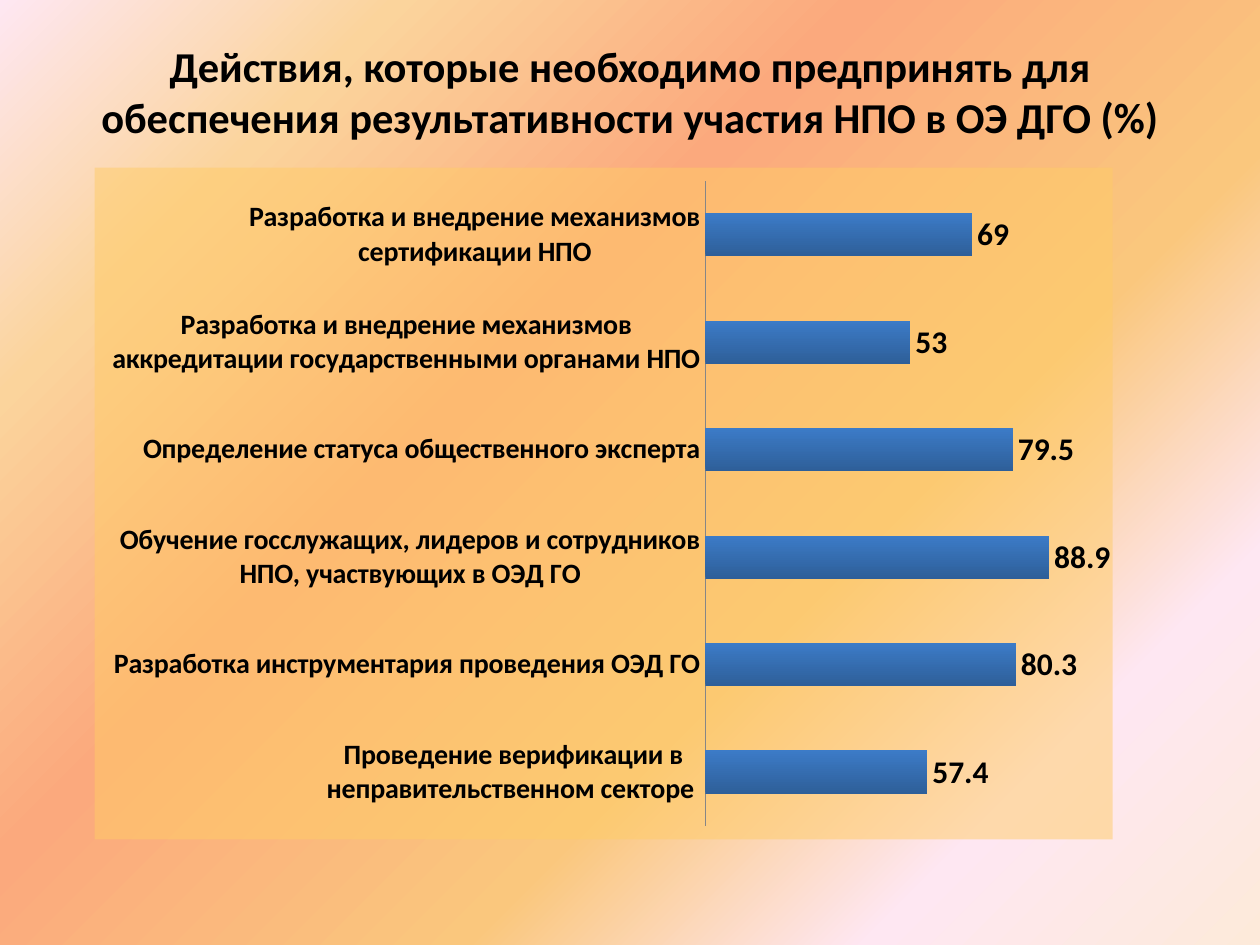
from lxml import etree
from pptx import Presentation
from pptx.chart.data import CategoryChartData
from pptx.dml.color import RGBColor
from pptx.enum.chart import XL_CHART_TYPE, XL_LABEL_POSITION, XL_TICK_MARK
from pptx.enum.text import MSO_ANCHOR, MSO_AUTO_SIZE, PP_ALIGN
from pptx.oxml import parse_xml
from pptx.oxml.ns import nsdecls, qn
from pptx.util import Cm, Pt

BAR_CLUSTERED = XL_CHART_TYPE.BAR_CLUSTERED
OUTSIDE_END = XL_LABEL_POSITION.OUTSIDE_END
NO_TICKS = XL_TICK_MARK.NONE
TOP = MSO_ANCHOR.TOP
NO_AUTOFIT = MSO_AUTO_SIZE.NONE
CENTER = PP_ALIGN.CENTER

BLACK = RGBColor(0x00, 0x00, 0x00)
AXIS_GREY = RGBColor(0x86, 0x86, 0x86)
BAR_LIGHT = RGBColor(0x3C, 0x7B, 0xC7)
BAR_DARK = RGBColor(0x2E, 0x5F, 0x99)
PANEL_YELLOW = RGBColor(0xFF, 0xCC, 0x66)
CREAM = RGBColor(0xFD, 0xEA, 0xDA)
PINK = RGBColor(0xFE, 0xE7, 0xF2)
ORANGE = RGBColor(0xFA, 0xC7, 0x7D)
CORAL = RGBColor(0xFB, 0xA9, 0x7D)
SAND = RGBColor(0xFB, 0xD4, 0x9C)
BACKGROUND_STOPS = [(0, CREAM), (18, PINK), (36, ORANGE),
                    (61, CORAL), (82, SAND), (100, PINK)]
FONT = "Calibri"

ACTIONS = [
    ("Разработка и внедрение механизмов сертификации НПО", 69),
    ("Разработка и внедрение механизмов аккредитации "
     "государственными органами НПО", 53),
    ("Определение статуса общественного эксперта", 79.5),
    ("Обучение госслужащих, лидеров и сотрудников НПО, "
     "участвующих в ОЭД ГО", 88.9),
    ("Разработка инструментария проведения ОЭД ГО", 80.3),
    ("Проведение верификации в неправительственном секторе ", 57.4),
]


def format_font(font, size, bold=True):
    font.name = FONT
    font.size = Pt(size)
    font.bold = bold
    font.color.rgb = BLACK


deck = Presentation()
deck.slide_width, deck.slide_height = Cm(25.4), Cm(19.05)
slide = deck.slides.add_slide(deck.slide_layouts[5])

# Background gradient, running from the lower right to the upper left
background = slide.background.fill
background.gradient()
background.gradient_angle = 135
stop_list = background.gradient_stops[0]._gs.getparent()
for stop in list(stop_list):
    stop_list.remove(stop)
for position, color in BACKGROUND_STOPS:
    stop = etree.SubElement(stop_list, qn("a:gs"), pos=str(position * 1000))
    etree.SubElement(stop, qn("a:srgbClr"), val=str(color))

# Title
title = slide.shapes.title
title.left, title.top = Cm(1.27), Cm(0.76)
title.width, title.height = Cm(22.86), Cm(3.68)
frame = title.text_frame
frame.text = ("Действия, которые необходимо предпринять для обеспечения "
              "результативности участия НПО в ОЭ ДГО (%)")
frame.word_wrap = True
frame.auto_size = NO_AUTOFIT
frame.vertical_anchor = TOP
frame.margin_top = Cm(0.05)
para = frame.paragraphs[0]
para.alignment = CENTER
format_font(para.runs[0].font, 24.3)

# Bar chart
chart_data = CategoryChartData()
chart_data.categories = [action for action, percent in ACTIONS]
chart_data.add_series("Series 1", [percent for action, percent in ACTIONS])
chart = slide.shapes.add_chart(BAR_CLUSTERED, Cm(1.91), Cm(3.38), Cm(20.52),
                               Cm(13.54), chart_data).chart
chart.has_legend = False
chart.has_title = False
format_font(chart.font, 10, bold=False)

category_axis = chart.category_axis
category_axis.reverse_order = True
category_axis.major_tick_mark = NO_TICKS
category_axis.minor_tick_mark = NO_TICKS
category_axis.format.line.color.rgb = AXIS_GREY
format_font(category_axis.tick_labels.font, 16)

value_axis = chart.value_axis
value_axis.minimum_scale, value_axis.maximum_scale = 0, 100
value_axis.has_major_gridlines = False
value_axis.visible = False

plot = chart.plots[0]
plot.gap_width = 150
plot.overlap = -25
plot.vary_by_categories = False
bar_fill = plot.series[0].format.fill
bar_fill.gradient()
bar_fill.gradient_angle = 90
for stop, color in zip(bar_fill.gradient_stops, (BAR_DARK, BAR_LIGHT)):
    stop.color.rgb = color

labels = plot.series[0].data_labels
labels.show_value = True
labels.position = OUTSIDE_END
format_font(labels.font, 18)

# Plot position as fractions of the chart, and the half-transparent panel
chart_space = chart._chartSpace
plot_area = chart_space.find(".//" + qn("c:plotArea"))
for old_layout in plot_area.findall(qn("c:layout")):
    plot_area.remove(old_layout)
plot_area.insert(0, parse_xml(
    f'<c:layout {nsdecls("c")}><c:manualLayout><c:layoutTarget val="inner"/>'
    '<c:xMode val="edge"/><c:yMode val="edge"/><c:x val="0.6"/>'
    '<c:y val="0.02"/><c:w val="0.38"/><c:h val="0.96"/>'
    '</c:manualLayout></c:layout>'))
chart_space.find(qn("c:chart")).addnext(parse_xml(
    f'<c:spPr {nsdecls("c", "a")}><a:solidFill><a:srgbClr val="{PANEL_YELLOW}">'
    '<a:alpha val="50000"/></a:srgbClr></a:solidFill>'
    '<a:ln><a:noFill/></a:ln></c:spPr>'))

deck.save("out.pptx")
